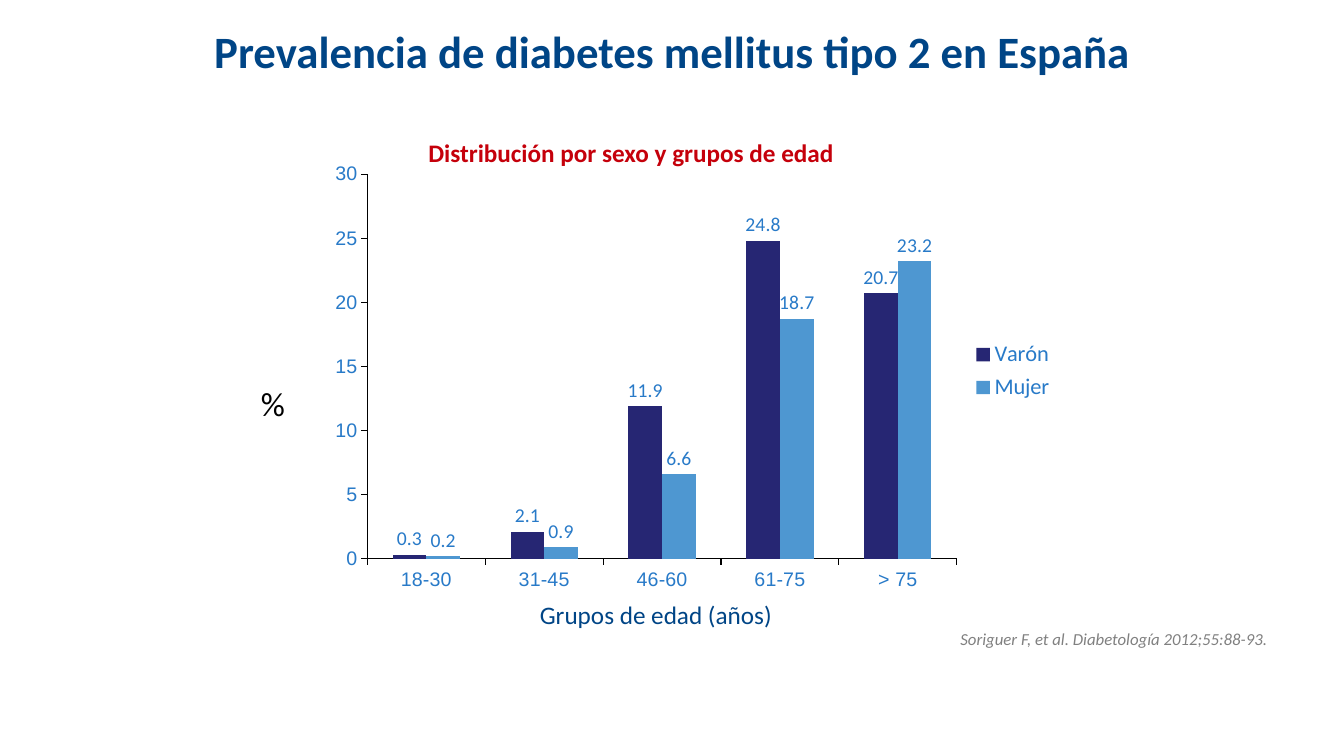
from dataclasses import dataclass

from lxml.etree import SubElement
from pptx import Presentation
from pptx.chart.data import CategoryChartData
from pptx.dml.color import RGBColor
from pptx.enum.chart import XL_CHART_TYPE, XL_LABEL_POSITION, XL_LEGEND_POSITION, XL_TICK_MARK
from pptx.enum.text import MSO_ANCHOR, PP_ALIGN
from pptx.oxml.ns import qn
from pptx.util import Inches, Pt


@dataclass(frozen=True)
class Theme:
    font: str = "Calibri"
    axis_font: str = "Arial"
    navy: str = "004586"
    red: str = "C5000B"
    gray: str = "808080"
    black: str = "000000"
    chart_text: str = "287AC8"
    title_size: float = 32
    unit_size: float = 24
    heading_size: float = 18
    legend_size: float = 16
    label_size: float = 14
    source_size: float = 12


THEME = Theme()
SLIDE_WIDTH, SLIDE_HEIGHT = 13.33, 7.5

AGE_GROUPS = ["18-30", "31-45", "46-60", "61-75", "> 75"]
PREVALENCE = [
    ("Varón", "262673", [0.3, 2.1, 11.9, 24.8, 20.7]),
    ("Mujer", "4E97D1", [0.2, 0.9, 6.6, 18.7, 23.2]),
]
CHART_BOX = (3.2, 1.55, 7.4, 4.44)
PLOT_SHARE = (0.06, 0.04, 0.79, 0.86)
LEGEND_SHARE = (0.86, 0.4, 0.13, 0.16)

TEXTS = [
    ("Distribución por sexo y grupos de edad", (4.15, 1.31, 6.77, 0.4),
     THEME.heading_size, THEME.red, PP_ALIGN.LEFT, {"bold": True}),
    ("Grupos de edad (años)", (4.93, 5.9, 3.15, 0.4),
     THEME.heading_size, THEME.navy, PP_ALIGN.CENTER, {}),
    ("%", (2.49, 3.75, 0.44, 0.5),
     THEME.unit_size, THEME.black, PP_ALIGN.LEFT, {}),
    ("Soriguer F, et al. Diabetología 2012;55:88-93.", (0, 6.19, 12.67, 0.32),
     THEME.source_size, THEME.gray, PP_ALIGN.RIGHT, {"italic": True}),
    ("Prevalencia de diabetes mellitus tipo 2 en España", (0.67, 0.17, 12, 0.66),
     THEME.title_size, THEME.navy, PP_ALIGN.CENTER, {"bold": True}),
]


def style_font(font, size, color, name=THEME.font):
    font.name = name
    font.size = Pt(size)
    font.color.rgb = RGBColor.from_string(color)


def add_text(slide, text, box, size, color, alignment, emphasis):
    shape = slide.shapes.add_textbox(*map(Inches, box))
    frame = shape.text_frame
    frame.word_wrap = True
    if size == THEME.title_size:
        frame.vertical_anchor = MSO_ANCHOR.MIDDLE
    paragraph = frame.paragraphs[0]
    paragraph.alignment = alignment
    run = paragraph.add_run()
    run.text = text
    style_font(run.font, size, color)
    for attribute, value in emphasis.items():
        setattr(run.font, attribute, value)


def place_in_chart(element, index, shares, inner=False):
    for layout in element.findall(qn("c:layout")):
        element.remove(layout)
    layout = SubElement(element, qn("c:layout"))
    element.insert(index, layout)
    manual = SubElement(layout, qn("c:manualLayout"))
    settings = [("layoutTarget", "inner")] if inner else []
    settings += [("xMode", "edge"), ("yMode", "edge")]
    settings += zip("xywh", shares)
    for tag, value in settings:
        SubElement(manual, qn(f"c:{tag}")).set("val", str(value))


def style_axis(axis):
    axis.has_major_gridlines = False
    axis.major_tick_mark = XL_TICK_MARK.OUTSIDE
    axis.minor_tick_mark = XL_TICK_MARK.NONE
    axis.format.line.color.rgb = RGBColor.from_string(THEME.black)
    axis.format.line.width = Pt(0.75)
    style_font(axis.tick_labels.font, THEME.label_size, THEME.chart_text, THEME.axis_font)


def add_prevalence_chart(slide):
    data = CategoryChartData()
    data.categories = AGE_GROUPS
    for name, _, values in PREVALENCE:
        data.add_series(name, values)
    chart = slide.shapes.add_chart(
        XL_CHART_TYPE.COLUMN_CLUSTERED, *map(Inches, CHART_BOX), data
    ).chart
    style_font(chart.font, THEME.heading_size, THEME.chart_text)
    chart.has_title = False

    for axis in (chart.category_axis, chart.value_axis):
        style_axis(axis)
    chart.value_axis.minimum_scale = 0
    chart.value_axis.maximum_scale = 30
    chart.value_axis.major_unit = 5

    plot = chart.plots[0]
    plot.gap_width = 150
    plot.overlap = 0
    plot.vary_by_categories = False
    for series, (_, color, _) in zip(plot.series, PREVALENCE):
        series.invert_if_negative = False
        series.format.fill.solid()
        series.format.fill.fore_color.rgb = RGBColor.from_string(color)
        labels = series.data_labels
        labels.show_value = True
        labels.position = XL_LABEL_POSITION.OUTSIDE_END
        style_font(labels.font, THEME.label_size, THEME.chart_text)

    chart.has_legend = True
    legend = chart.legend
    legend.position = XL_LEGEND_POSITION.RIGHT
    legend.include_in_layout = False
    style_font(legend.font, THEME.legend_size, THEME.chart_text)

    chart_space = chart.element
    place_in_chart(chart_space.find(".//" + qn("c:plotArea")), 0, PLOT_SHARE, inner=True)
    place_in_chart(chart_space.find(".//" + qn("c:legend")), 1, LEGEND_SHARE)


def main():
    presentation = Presentation()
    presentation.slide_width = Inches(SLIDE_WIDTH)
    presentation.slide_height = Inches(SLIDE_HEIGHT)
    slide = presentation.slides.add_slide(presentation.slide_layouts[6])
    add_prevalence_chart(slide)
    for entry in TEXTS:
        add_text(slide, *entry)
    presentation.save("out.pptx")


if __name__ == "__main__":
    main()
